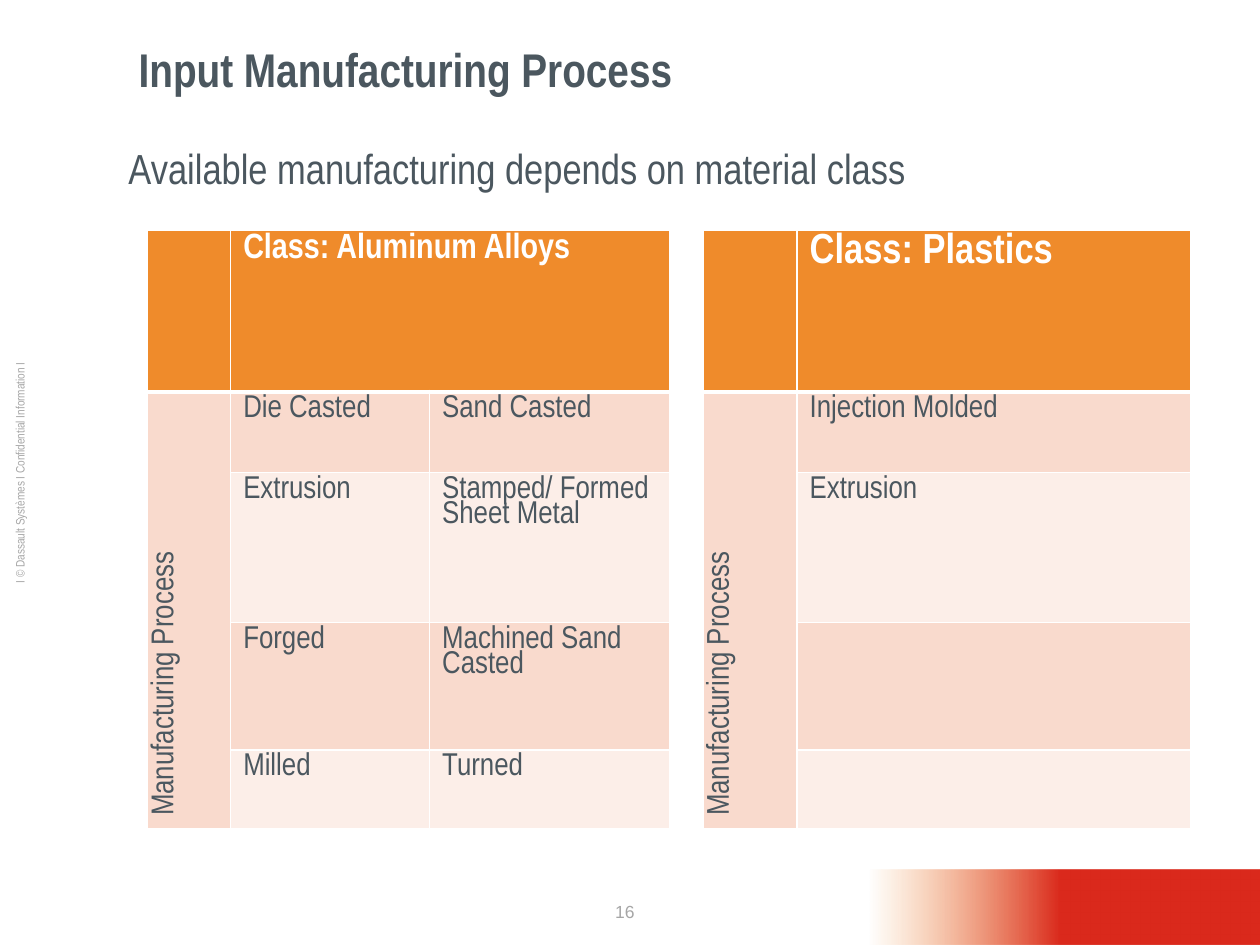
from lxml import etree
from pptx import Presentation
from pptx.dml.color import RGBColor
from pptx.enum.shapes import MSO_SHAPE
from pptx.enum.text import MSO_ANCHOR, PP_ALIGN
from pptx.oxml.ns import qn
from pptx.util import Cm, Pt

RECT = MSO_SHAPE.RECTANGLE
LEFT, CENTER = PP_ALIGN.LEFT, PP_ALIGN.CENTER
TOP, MIDDLE = MSO_ANCHOR.TOP, MSO_ANCHOR.MIDDLE

WHITE, SLATE, GREY = "FFFFFF", "4B575F", "A6A6A6"
ORANGE, RED, PEACH, BLUSH = "EF8B2B", "DA291C", "F9DACD", "FCEEE8"
NARROW = "Arial Narrow"

COLUMNS = [1.68, 4.01, 4.85, 0.66, 1.9, 7.93]
ROWS = [3.25, 1.63, 3.02, 2.57, 1.58]
SPACER = 3
SIDES = [0, 4]
HEADERS = {1: ("Class: Aluminum Alloys", 20), 5: ("Class: Plastics", 24)}
PROCESSES = [
    ("Die Casted", "Sand Casted", "Injection Molded"),
    ("Extrusion", "Stamped/ Formed Sheet Metal", "Extrusion"),
    ("Forged", "Machined Sand Casted", ""),
    ("Milled", "Turned", ""),
]


def rgb(value):
    return RGBColor.from_string(value)


def write(tf, text, size=18, color=SLATE, font=NARROW, bold=False,
          align=LEFT, spacing=None):
    p = tf.paragraphs[0]
    p.alignment = align
    if spacing:
        p.line_spacing = spacing
    r = p.add_run()
    r.text = text
    r.font.name = font
    r.font.size = Pt(size)
    r.font.bold = bold
    r.font.color.rgb = rgb(color)


class Deck:
    def __init__(self, prs):
        self.prs = prs
        self.s = prs.slides.add_slide(prs.slide_layouts[5])

    def title(self, text, box, **style):
        sp = self.s.shapes.title
        sp.left, sp.top, sp.width, sp.height = map(Cm, box)
        sp.text_frame.vertical_anchor = MIDDLE
        write(sp.text_frame, text, **style)

    def text(self, text, box, rotation=0, **style):
        sp = self.s.shapes.add_textbox(*map(Cm, box))
        sp.rotation = rotation
        sp.text_frame.word_wrap = True
        sp.text_frame.vertical_anchor = TOP
        write(sp.text_frame, text, **style)

    def fading_bar(self, box, solid, fade):
        sp = self.s.shapes.add_shape(RECT, *map(Cm, box))
        sp.shadow.inherit = False
        sp.line.fill.background()
        sp.fill.gradient()
        sp.fill.gradient_angle = 180
        stops = sp.fill.gradient_stops
        for stop, color, position in zip(stops, (solid, fade), (0.51, 1)):
            stop.color.rgb = rgb(color)
            stop.position = position
        color = sp.fill._xPr.findall(".//" + qn("a:srgbClr"))[-1]
        etree.SubElement(color, qn("a:alpha"), val="0")

    def table(self, left, top, columns, rows):
        shape = self.s.shapes.add_table(
            len(rows), len(columns), Cm(left), Cm(top),
            Cm(sum(columns)), Cm(sum(rows)))
        table = shape.table
        for column, width in zip(table.columns, columns):
            column.width = Cm(width)
        for row, height in zip(table.rows, rows):
            row.height = Cm(height)
        return table

    def cell(self, cell, fill, borders):
        tc_pr = cell._tc.get_or_add_tcPr()
        for side, width in borders.items():
            ln = etree.SubElement(tc_pr, qn("a:" + side), w=str(Pt(width)))
            solid = etree.SubElement(ln, qn("a:solidFill"))
            etree.SubElement(solid, qn("a:srgbClr"), val=WHITE)
        cell.fill.solid()
        cell.fill.fore_color.rgb = rgb(fill)

    def process_table(self, left, top):
        table = self.table(left, top, COLUMNS, ROWS)
        for i in range(len(ROWS)):
            for j in range(len(COLUMNS)):
                if j == SPACER:
                    fill = WHITE
                elif i == 0:
                    fill = ORANGE
                else:
                    fill = PEACH if i % 2 or j in SIDES else BLUSH
                borders = dict.fromkeys(("lnL", "lnR", "lnT", "lnB"), 1)
                if i < 2:
                    borders["lnT" if i else "lnB"] = 3
                self.cell(table.cell(i, j), fill, borders)

        table.cell(0, 1).merge(table.cell(0, 2))
        for j in SIDES + [SPACER]:
            table.cell(1, j).merge(table.cell(len(ROWS) - 1, j))
        for j, (text, size) in HEADERS.items():
            write(table.cell(0, j).text_frame, text, size=size,
                  color=WHITE, bold=True, spacing=0.83)
        for j in SIDES:
            cell = table.cell(1, j)
            cell._tc.get_or_add_tcPr().set("vert", "vert270")
            write(cell.text_frame, "Manufacturing Process", spacing=0.83)
        for i, names in enumerate(PROCESSES, 1):
            for j, name in zip((1, 2, 5), names):
                if name:
                    write(table.cell(i, j).text_frame, name, spacing=0.83)


def main():
    prs = Presentation()
    prs.slide_width, prs.slide_height = Cm(25.4), Cm(19.05)
    deck = Deck(prs)
    deck.text("16", (11.63, 18.03, 1.93, 1.02), size=10, color=GREY,
              font="Arial", align=CENTER)
    deck.text("Ι © Dassault Systèmes Ι Confidential Information Ι",
              (-9.12, 9.25, 19.05, 0.56), rotation=270, size=7, color=GREY,
              align=CENTER)
    deck.fading_bar((17.53, 17.53, 7.87, 1.52), RED, ORANGE)
    deck.title("Input Manufacturing Process", (2.54, 0.74, 22.86, 1.27),
               size=27, bold=True)
    deck.text("Available manufacturing depends on material class",
              (2.34, 2.74, 21.79, 1.5), size=24)
    deck.process_table(2.97, 4.65)
    prs.save("out.pptx")


if __name__ == "__main__":
    main()
